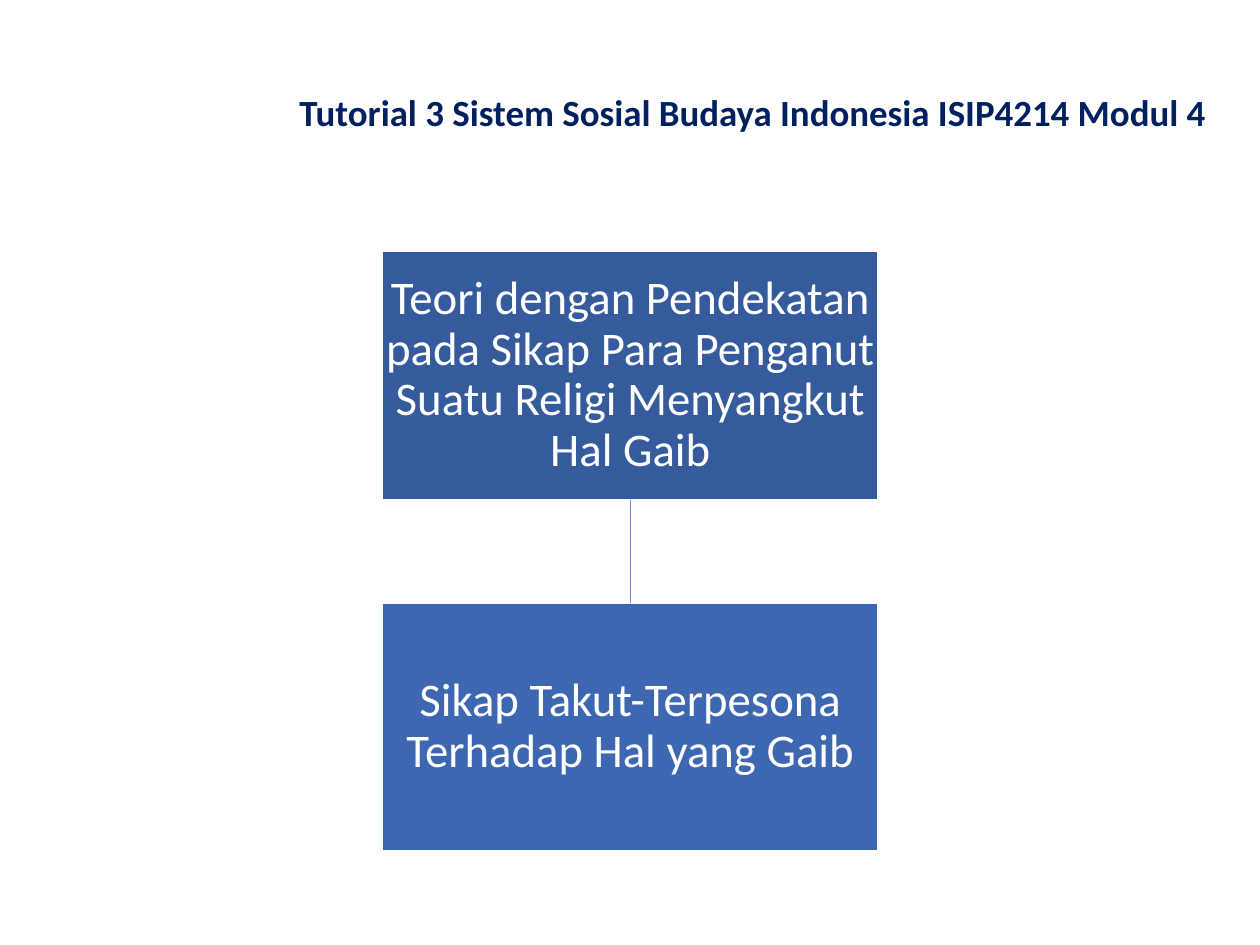
from dataclasses import dataclass

import pptx
import pptx.dml.color
import pptx.enum.shapes
import pptx.enum.text
import pptx.oxml.ns
import pptx.shapes.autoshape
import pptx.slide
import pptx.util
from lxml import etree
from pptx.dml.color import RGBColor
from pptx.util import Cm

NAVY = RGBColor(0x00, 0x20, 0x60)
DARK_BLUE = RGBColor(0x36, 0x5B, 0x9D)
MID_BLUE = RGBColor(0x3E, 0x67, 0xB2)
LINK_BLUE = RGBColor(0x6D, 0x89, 0xCB)
WHITE = RGBColor(0xFF, 0xFF, 0xFF)

BOX_LEFT = 10.97
BOX_TOP = 7.22
BOX_WIDTH = 14.2
BOX_HEIGHT = 7.1
BOX_PITCH = 10.08


@dataclass(frozen=True)
class Topic:
    wording: str
    fill: RGBColor


TOPICS = [
    Topic(
        "Teori dengan Pendekatan pada Sikap Para Penganut Suatu Religi Menyangkut Hal Gaib",
        DARK_BLUE,
    ),
    Topic("Sikap Takut-Terpesona Terhadap Hal yang Gaib", MID_BLUE),
]


def write_text(
    holder: pptx.shapes.autoshape.Shape,
    wording: str,
    size: float,
    color: RGBColor,
    alignment: pptx.enum.text.PP_ALIGN,
    bold: bool = False,
) -> None:
    frame = holder.text_frame
    frame.word_wrap = True
    frame.vertical_anchor = pptx.enum.text.MSO_ANCHOR.MIDDLE
    frame.text = wording
    paragraph = frame.paragraphs[0]
    paragraph.alignment = alignment
    paragraph.line_spacing = 0.9
    font = paragraph.runs[0].font
    font.name = "Calibri"
    font.size = pptx.util.Pt(size)
    font.bold = bold
    font.color.rgb = color


def draw_topic(slide: pptx.slide.Slide, topic: Topic, top: float) -> None:
    box = slide.shapes.add_shape(
        pptx.enum.shapes.MSO_SHAPE.RECTANGLE,
        Cm(BOX_LEFT), Cm(top), Cm(BOX_WIDTH), Cm(BOX_HEIGHT),
    )
    box.shadow.inherit = False
    box.fill.solid()
    box.fill.fore_color.rgb = topic.fill
    box.line.color.rgb = WHITE
    box.line.width = pptx.util.Pt(1)
    frame = box.text_frame
    frame.margin_left = frame.margin_right = Cm(0.07)
    frame.margin_top = frame.margin_bottom = Cm(0.07)
    write_text(box, topic.wording, 38, WHITE, pptx.enum.text.PP_ALIGN.CENTER)


def draw_link(slide: pptx.slide.Slide, top: float, bottom: float) -> None:
    center = Cm(BOX_LEFT + BOX_WIDTH / 2)
    link = slide.shapes.add_connector(
        pptx.enum.shapes.MSO_CONNECTOR.STRAIGHT, center, Cm(top), center, Cm(bottom)
    )
    link.line.color.rgb = LINK_BLUE
    link.line.width = pptx.util.Pt(1)
    properties = link._element.spPr
    etree.SubElement(properties, pptx.oxml.ns.qn("a:effectLst"))


def main() -> None:
    presentation = pptx.Presentation()
    presentation.slide_width = Cm(36.12)
    presentation.slide_height = Cm(27.1)
    slide = presentation.slides.add_slide(presentation.slide_layouts[6])

    draw_link(slide, BOX_TOP + BOX_HEIGHT, BOX_TOP + BOX_PITCH)
    for index, topic in enumerate(TOPICS):
        draw_topic(slide, topic, BOX_TOP + index * BOX_PITCH)

    heading = slide.shapes.add_textbox(Cm(8.33), Cm(1.7), Cm(27.79), Cm(3.18))
    write_text(
        heading,
        "Tutorial 3 Sistem Sosial Budaya Indonesia ISIP4214 Modul 4",
        30, NAVY, pptx.enum.text.PP_ALIGN.LEFT, bold=True,
    )

    presentation.save("out.pptx")


if __name__ == "__main__":
    main()
